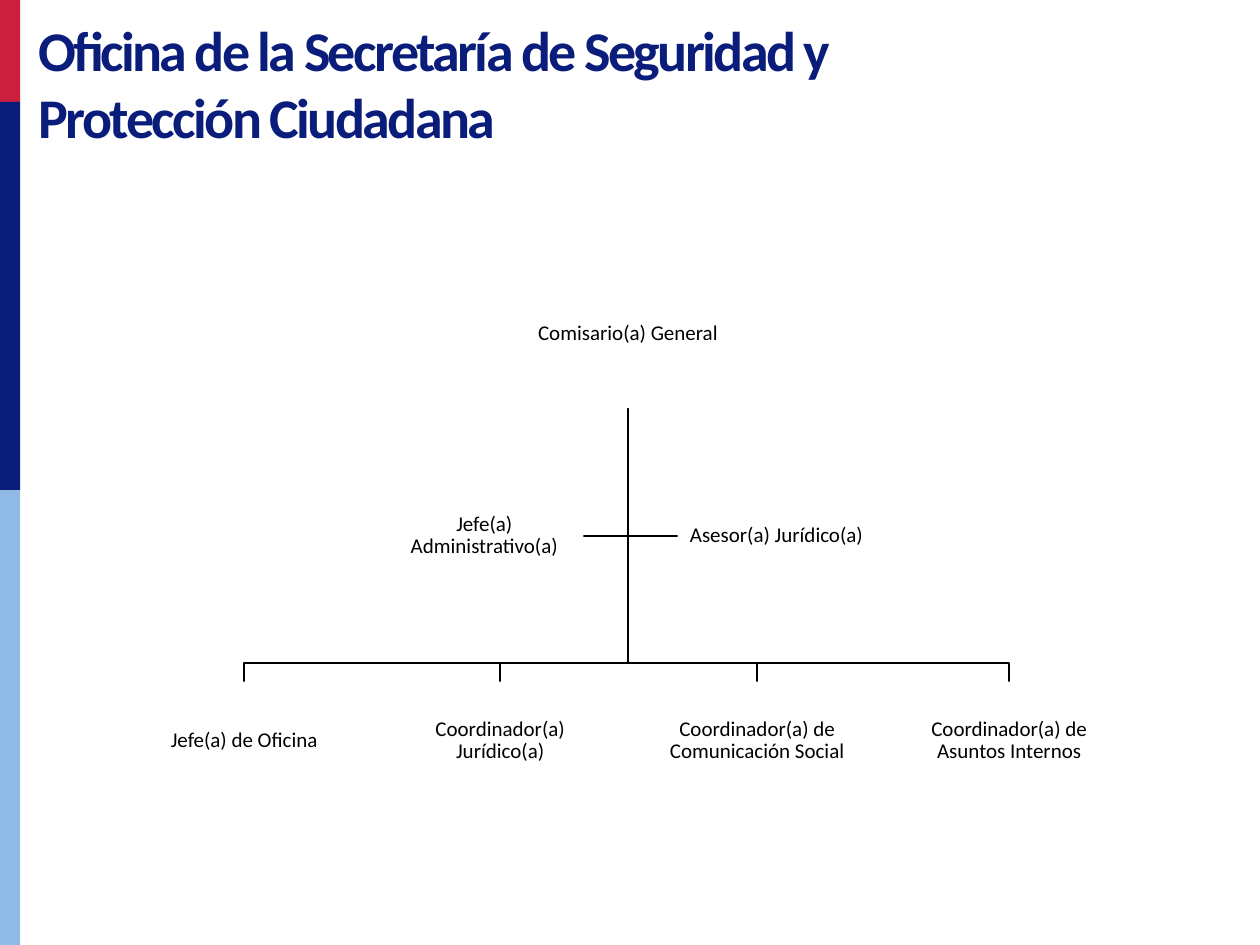
from pptx import Presentation
from pptx import util as u
from pptx.dml.color import RGBColor
from pptx.enum import shapes, text

RED = RGBColor(0xCA, 0x1F, 0x3D)
NAVY = RGBColor(0x0A, 0x1D, 0x7A)
SKY = RGBColor(0x8F, 0xBA, 0xE5)
WHITE = RGBColor(0xFF, 0xFF, 0xFF)
BLACK = RGBColor(0, 0, 0)
FONT = "Calibri"


def add_rect(s, left, top, width, height, color):
    """Add a plain filled rectangle, measured in centimetres."""
    sp = s.shapes.add_shape(shapes.MSO_SHAPE.RECTANGLE, u.Cm(left), u.Cm(top),
                            u.Cm(width), u.Cm(height))
    sp.shadow.inherit = False
    sp.fill.solid()
    sp.fill.fore_color.rgb = color
    sp.line.fill.background()
    return sp


def add_sidebar(s, left, top, width, height):
    """Stack the three coloured bands down the slide edge."""
    y = top
    for share, color in ((0.108, RED), (0.411, NAVY), (0.481, SKY)):
        add_rect(s, left, y, width, share * height, color)
        y += share * height


def add_title(s, left, top, width, height, title):
    """Add the slide title with tight letter spacing."""
    sp = s.shapes.add_textbox(u.Cm(left), u.Cm(top), u.Cm(width), u.Cm(height))
    tf = sp.text_frame
    tf.word_wrap = True
    tf.auto_size = text.MSO_AUTO_SIZE.SHAPE_TO_FIT_TEXT
    p = tf.paragraphs[0]
    r = p.add_run()
    r.text = title
    r._r.get_or_add_rPr().set("spc", "-150")
    p.font.name = FONT
    p.font.size = u.Pt(32)
    p.font.bold = True
    p.font.color.rgb = NAVY


def add_post(s, left, top, width, height, label):
    """Add one white box holding the name of a post."""
    tf = add_rect(s, left, top, width, height, WHITE).text_frame
    tf.word_wrap = True
    tf.vertical_anchor = text.MSO_ANCHOR.MIDDLE
    tf.margin_left = tf.margin_right = tf.margin_top = tf.margin_bottom = u.Cm(0.02)
    tf.text = label
    for p in tf.paragraphs:
        p.alignment = text.PP_ALIGN.CENTER
        p.line_spacing = 0.9
        p.font.name = FONT
        p.font.size = u.Pt(12)
        p.font.color.rgb = BLACK


def add_branch(s, points):
    """Draw an open black line through points given in centimetres."""
    start, *rest = [(u.Cm(x), u.Cm(y)) for x, y in points]
    fb = s.shapes.build_freeform(*start)
    fb.add_line_segments(rest, close=False)
    sp = fb.convert_to_shape()
    sp.shadow.inherit = False
    sp.fill.background()
    sp.line.color.rgb = BLACK
    sp.line.width = u.Pt(1)


def add_org_chart(s, left, top, width, height, head, staff, reports):
    """Lay out the head, two staff posts and a row of reports."""
    head_w, head_h = 6, 3
    staff_w, staff_h = 3.99, 2.2
    report_w, report_h = 4.37, 2.39
    axis = left + width / 2
    trunk = (axis, top + head_h)
    staff_y = top + 5.57
    row_y = top + height - report_h
    bus_y = row_y - 0.38

    staff_sides = (axis - 0.9, axis + 1)
    report_lefts = [left + dx for dx in (0, 5.16, 10.34, 15.42)]

    for x in reversed(staff_sides):
        add_branch(s, [trunk, (axis, staff_y), (x, staff_y)])
    for x in reversed(report_lefts):
        mid = x + report_w / 2
        add_branch(s, [trunk, (axis, bus_y), (mid, bus_y), (mid, row_y)])

    add_post(s, axis - head_w / 2, top, head_w, head_h, head)
    for x, label in zip(report_lefts, reports):
        add_post(s, x, row_y, report_w, report_h, label)
    staff_lefts = (staff_sides[0] - staff_w, staff_sides[1])
    for x, label in zip(staff_lefts, staff):
        add_post(s, x, staff_y - staff_h / 2, staff_w, staff_h, label)


def main():
    """Build and save the slide."""
    prs = Presentation()
    prs.slide_width, prs.slide_height = u.Cm(25.4), u.Cm(19.05)
    s = prs.slides.add_slide(prs.slide_layouts[6])
    add_sidebar(s, 0, 0, 0.41, 19.05)
    add_title(s, 0.53, 0.18, 18.67, 3,
              "Oficina de la Secretaría de Seguridad y Protección Ciudadana")
    add_org_chart(
        s, 2.74, 5.23, 19.84, 10.9,
        "Comisario(a) General",
        ("Jefe(a) Administrativo(a)", "Asesor(a) Jurídico(a)"),
        ("Jefe(a) de Oficina",
         "Coordinador(a)\nJurídico(a)",
         "Coordinador(a) de Comunicación Social",
         "Coordinador(a) de Asuntos Internos"))
    prs.save("out.pptx")


if __name__ == "__main__":
    main()
